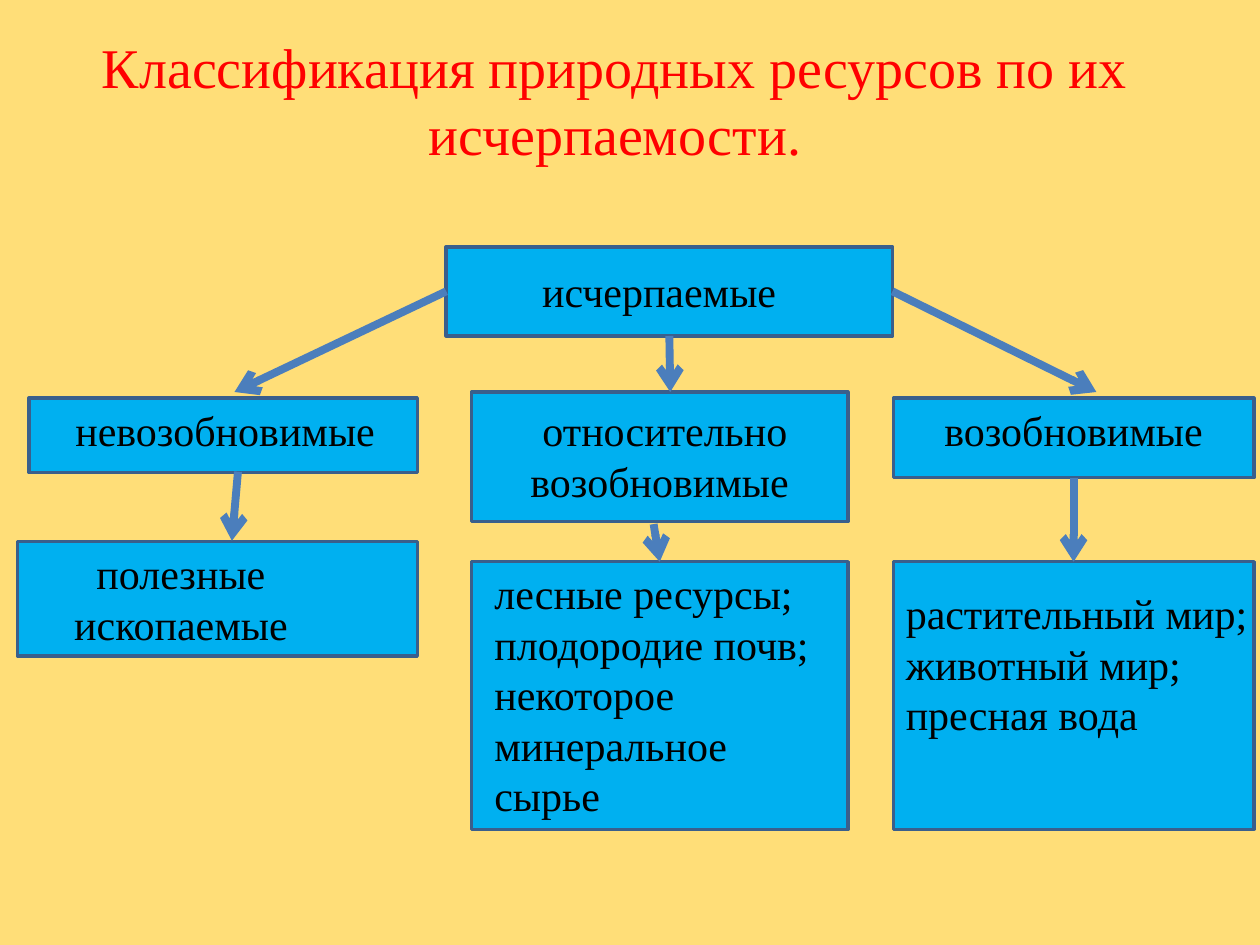
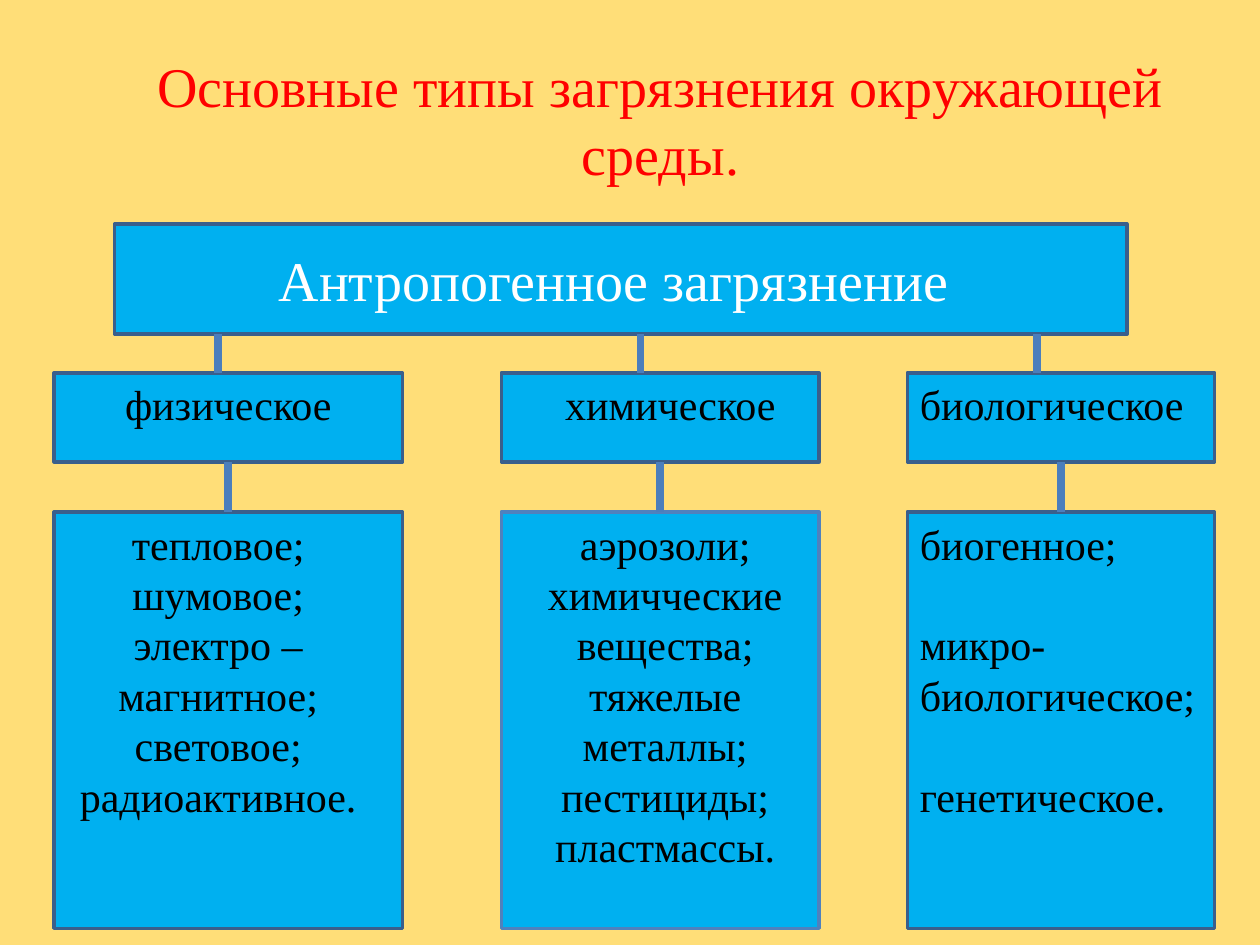
from dataclasses import dataclass

from lxml import etree
from pptx import Presentation
from pptx.dml.color import RGBColor
from pptx.enum.shapes import MSO_CONNECTOR, MSO_SHAPE
from pptx.enum.text import MSO_ANCHOR, MSO_AUTO_SIZE, PP_ALIGN
from pptx.oxml.ns import qn
from pptx.util import Pt

LEFT, CENTER = PP_ALIGN.LEFT, PP_ALIGN.CENTER
ANCHOR_TOP, ANCHOR_MIDDLE = MSO_ANCHOR.TOP, MSO_ANCHOR.MIDDLE
NO_AUTOFIT = MSO_AUTO_SIZE.NONE
RECTANGLE, STRAIGHT = MSO_SHAPE.RECTANGLE, MSO_CONNECTOR.STRAIGHT
TOP_SIDE, LEFT_SIDE, BOTTOM_SIDE, RIGHT_SIDE = range(4)
TITLE_ONLY = 5


@dataclass(frozen=True)
class Theme:
    font: str = "Times New Roman"
    background: str = "FFDE78"
    title: str = "FF0000"
    box: str = "00B0F0"
    outline: str = "3A5F8C"
    light_outline: str = "4F81BD"
    link: str = "4B7EBC"
    text: str = "000000"
    light_text: str = "FFFFFF"
    title_size: float = 32
    body_size: float = 24
    leading: float = 1.2
    outline_width: float = 2
    link_width: float = 4.5


THEME = Theme()
INSETS = (7.2, 3.6, 7.2)  # left, top, right


def rgb(value):
    return RGBColor.from_string(value)


# --- Text ---
def write(tf, lines, color, size, align, anchor=ANCHOR_TOP, insets=INSETS, gap=0):
    left, top, right = insets
    frame = {"word_wrap": True, "auto_size": NO_AUTOFIT, "vertical_anchor": anchor,
             "margin_left": Pt(left), "margin_top": Pt(top),
             "margin_right": Pt(right), "margin_bottom": Pt(3.6)}
    for name, value in frame.items():
        setattr(tf, name, value)
    for i, (text, space) in enumerate(lines):
        p = tf.paragraphs[0] if i == 0 else tf.add_paragraph()
        layout = {"alignment": align, "line_spacing": Pt(size * THEME.leading),
                  "space_before": Pt(space)}
        for name, value in layout.items():
            setattr(p, name, value)
        r = p.add_run()
        r.text = text
        for name, value in {"name": THEME.font, "size": Pt(size)}.items():
            setattr(r.font, name, value)
        r.font.color.rgb = rgb(color)


# --- Slide with title ---
def add_slide(prs, title, box):
    s = prs.slides.add_slide(prs.slide_layouts[TITLE_ONLY])
    s.background.fill.solid()
    s.background.fill.fore_color.rgb = rgb(THEME.background)
    sp = s.shapes.title
    sp.left, sp.top, sp.width, sp.height = map(Pt, box)
    write(sp.text_frame, [(title, 0)], THEME.title, THEME.title_size, CENTER)
    return s


# --- Filled box; each line is a text or a (text, space before) pair ---
def add_box(s, box, *lines, outline=THEME.outline, color=THEME.text,
            size=THEME.body_size, align=CENTER, **frame):
    sp = s.shapes.add_shape(RECTANGLE, *map(Pt, box))
    sp.shadow.inherit = False
    sp.fill.solid()
    sp.fill.fore_color.rgb = rgb(THEME.box)
    sp.line.color.rgb = rgb(outline)
    sp.line.width = Pt(THEME.outline_width)
    pairs = [(line, 0) if isinstance(line, str) else line for line in lines]
    write(sp.text_frame, pairs, color, size, align, **frame)
    return sp


# --- Link; each end is an (x, y) point or a (box, side) pair ---
def end_point(end):
    sp, side = end
    if isinstance(sp, (int, float)):
        return Pt(sp), Pt(side)
    dx, dy = {TOP_SIDE: (1, 0), LEFT_SIDE: (0, 1),
              BOTTOM_SIDE: (1, 2), RIGHT_SIDE: (2, 1)}[side]
    return sp.left + sp.width * dx // 2, sp.top + sp.height * dy // 2


def add_link(s, start, end, arrow=False):
    c = s.shapes.add_connector(STRAIGHT, *end_point(start), *end_point(end))
    for target, join in ((start, c.begin_connect), (end, c.end_connect)):
        if not isinstance(target[0], (int, float)):
            join(*target)
    c.line.color.rgb = rgb(THEME.link)
    c.line.width = Pt(THEME.link_width)
    if arrow:
        etree.SubElement(c.line._get_or_add_ln(), qn("a:tailEnd"), type="arrow")
    etree.SubElement(c._element.spPr, qn("a:effectLst"))


def resources_slide(prs):
    s = add_slide(prs, "Классификация природных ресурсов по их исчерпаемости.",
                  (48, 15, 607, 85))
    # Classes
    exhaustible = add_box(s, (255, 141, 255, 51), "исчерпаемые",
                          insets=(1.4, 10.8, 13))
    add_box(s, (16.5, 227.5, 222, 42.5), "невозобновимые",
            align=LEFT, insets=(26.6, 3.6, 7.2))
    add_box(s, (269.5, 224, 215, 74), "относительно возобновимые ",
            insets=(13, 7.2, 7.2))
    renewable = add_box(s, (510.5, 227.5, 206, 45.5), "возобновимые")

    # Examples
    add_box(s, (10, 309.5, 228.5, 65.5), "полезные ископаемые",
            insets=(13.7, 3.6, 55.4))
    forests = add_box(s, (269.5, 321, 215, 153), "лесные ресурсы;",
                      "плодородие почв;", "некоторое минеральное сырье",
                      align=LEFT, insets=(13, 3.6, 7.2))
    wildlife = add_box(s, (510.5, 321, 206, 153), "растительный мир;",
                       "животный мир;", "пресная вода",
                       align=LEFT, insets=(7.2, 15, 1))

    # Arrows
    for start, end in (
        ((exhaustible, LEFT_SIDE), (134, 224)),
        ((exhaustible, RIGHT_SIDE), (626.5, 224)),
        ((exhaustible, BOTTOM_SIDE), (383, 224)),
        ((136, 269.5), (132.5, 309)),
        ((373.5, 299.5), (forests, TOP_SIDE)),
        ((renewable, BOTTOM_SIDE), (wildlife, TOP_SIDE)),
    ):
        add_link(s, start, end, arrow=True)


def pollution_slide(prs):
    s = add_slide(prs, "Основные типы загрязнения окружающей среды.",
                  (60, 26, 635, 85))
    add_box(s, (65.5, 128, 578.5, 63), "Антропогенное загрязнение ",
            color=THEME.light_text, size=THEME.title_size, anchor=ANCHOR_MIDDLE)

    line_gap = THEME.body_size * THEME.leading
    # Columns: left, width, stem x, type, type format, examples, examples format
    columns = (
        (31, 199, 124.5, "физическое", {},
         ("тепловое;", "шумовое;", "электро – магнитное;", "световое;",
          "радиоактивное."),
         {"insets": (7.2, 3.6, 18.7)}),
        (286.5, 181.5, 366, "химическое", {"insets": (13, 3.6, 1.4)},
         ("аэрозоли;", "химичческие", "вещества;", "тяжелые металлы;",
          "пестициды;", "пластмассы."),
         {"insets": (7.2, 3.6, 1.4), "outline": THEME.light_outline}),
        (518.5, 175.5, 592.5, "биологическое", {"align": LEFT},
         ("биогенное;", ("микро-", line_gap), "биологическое;",
          ("генетическое.", line_gap)),
         {"align": LEFT}),
    )
    for left, width, stem, kind, kind_format, examples, examples_format in columns:
        head = add_box(s, (left, 213, width, 51), kind, **kind_format)
        body = add_box(s, (left, 292.5, width, 238), *examples, **examples_format)
        add_link(s, (stem, 191), (stem, 213))
        add_link(s, (head, BOTTOM_SIDE), (body, TOP_SIDE))


def main():
    prs = Presentation()
    prs.slide_width, prs.slide_height = Pt(720), Pt(540)
    resources_slide(prs)
    pollution_slide(prs)
    prs.save("out.pptx")


if __name__ == "__main__":
    main()
